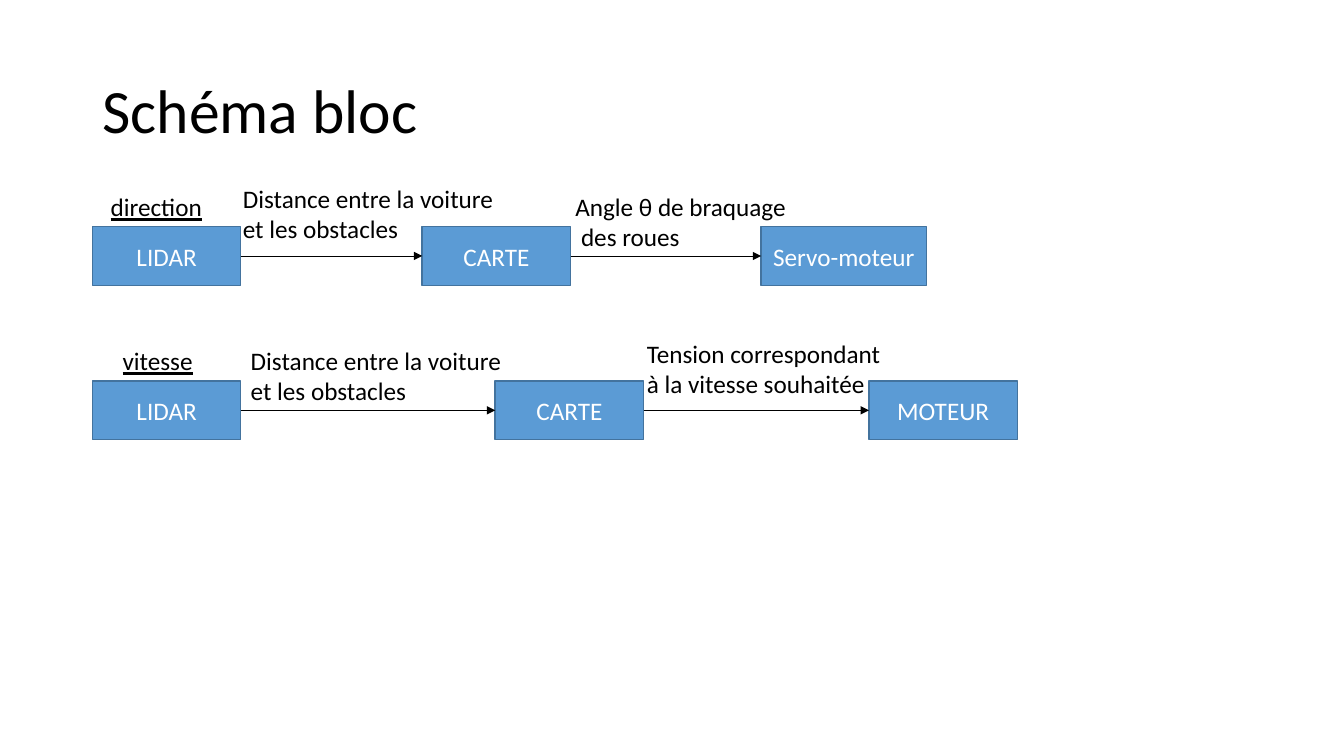
from itertools import pairwise

from lxml import etree
from pptx import Presentation
from pptx.dml.color import RGBColor
from pptx.enum.shapes import MSO_CONNECTOR as Connector, MSO_SHAPE as Shape
from pptx.enum.text import MSO_ANCHOR as Anchor, MSO_AUTO_SIZE as AutoSize, PP_ALIGN as Align
from pptx.oxml.ns import qn
from pptx.util import Cm, Pt

BLACK = RGBColor(0x00, 0x00, 0x00)
WHITE = RGBColor(0xFF, 0xFF, 0xFF)
BLUE = RGBColor(0x5B, 0x9B, 0xD5)
DARK_BLUE = RGBColor(0x43, 0x73, 0x9E)
RIGHT_SITE, LEFT_SITE = 3, 1


def write(frame, text, size=18, color=BLACK, align=Align.LEFT, anchor=Anchor.TOP,
          underline=None, spacing=None, wrap=True, fit=AutoSize.NONE):
    frame.text = text
    frame.word_wrap = wrap
    frame.auto_size = fit
    frame.vertical_anchor = anchor
    for line in frame.paragraphs:
        line.alignment = align
        line.line_spacing = spacing
        font = line.runs[0].font
        font.name, font.size, font.underline = "Calibri", Pt(size), underline
        font.color.rgb = color


prs = Presentation()
prs.slide_width, prs.slide_height = Cm(33.87), Cm(19.05)
slide = prs.slides.add_slide(prs.slide_layouts[5])
shapes = slide.shapes

# Title
title = shapes.title
title.left, title.top, title.width, title.height = Cm(2.33), Cm(1.02), Cm(29.21), Cm(3.68)
write(title.text_frame, "Schéma bloc", size=44, anchor=Anchor.MIDDLE, spacing=0.9)

# Block chains: top of the row, then name, left and width of each block
chains = [
    (5.71, [("LIDAR", 2.33, 3.74), ("CARTE", 10.64, 3.74), ("Servo-moteur", 19.18, 4.17)]),
    (9.6, [("LIDAR", 2.33, 3.74), ("CARTE", 12.48, 3.74), ("MOTEUR", 21.9, 3.74)]),
]
for top, blocks in chains:
    chain = []
    for name, left, width in blocks:
        block = shapes.add_shape(Shape.RECTANGLE, Cm(left), Cm(top), Cm(width), Cm(1.48))
        block.shadow.inherit = False
        block.fill.solid()
        block.fill.fore_color.rgb = BLUE
        block.line.color.rgb = DARK_BLUE
        block.line.width = Pt(1)
        write(block.text_frame, name, color=WHITE, align=Align.CENTER, anchor=Anchor.MIDDLE)
        chain.append(block)

    # Arrows from each block to the next
    for source, target in pairwise(chain):
        arrow = shapes.add_connector(Connector.STRAIGHT, 0, 0, 0, 0)
        arrow.begin_connect(source, RIGHT_SITE)
        arrow.end_connect(target, LEFT_SITE)
        arrow.line.color.rgb = BLACK
        arrow.line.width = Pt(0.5)
        arrow_props = arrow._element.spPr
        etree.SubElement(arrow_props.find(qn("a:ln")), qn("a:tailEnd"), type="triangle")
        etree.SubElement(arrow_props, qn("a:effectLst"))

# Labels: text, left, top, width, height, underline, wrap
labels = [
    ("direction", 2.54, 4.7, 2.9, 1.02, True, False),
    ("vitesse", 2.84, 8.58, 2.29, 1.02, True, False),
    ("Distance entre la voiture\net les obstacles", 5.87, 4.5, 7.04, 1.8, None, False),
    ("Angle θ de braquage\n des roues", 14.25, 4.7, 5.89, 1.8, None, False),
    ("Distance entre la voiture\net les obstacles", 6.07, 8.58, 16.94, 1.8, None, True),
    ("Tension correspondant\nà la vitesse souhaitée", 16.05, 8.4, 16.94, 1.8, None, True),
]
for text, left, top, width, height, underline, wrap in labels:
    label = shapes.add_textbox(Cm(left), Cm(top), Cm(width), Cm(height))
    write(label.text_frame, text, underline=underline, wrap=wrap, fit=AutoSize.SHAPE_TO_FIT_TEXT)

prs.save("out.pptx")
